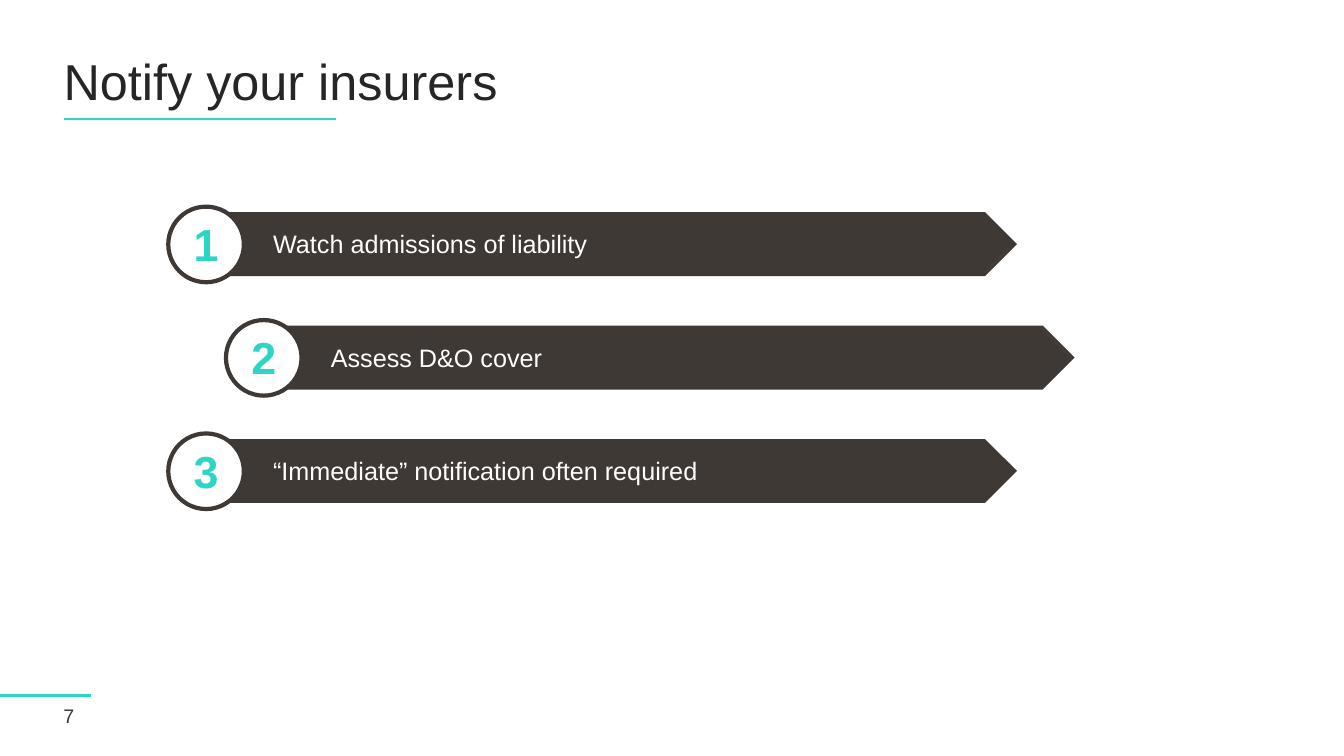
"""Build the slide on notifying insurers: three numbered arrow bars."""
from dataclasses import dataclass

from lxml import etree
from pptx import Presentation
from pptx import util as u
from pptx.dml.color import RGBColor
from pptx.enum import shapes, text
from pptx.oxml.ns import qn

TEAL = RGBColor(0x2C, 0xD5, 0xC4)
BROWN = RGBColor(0x3E, 0x39, 0x35)
BLACK = RGBColor(0x26, 0x26, 0x26)
WHITE = RGBColor(0xFF, 0xFF, 0xFF)
FONT = "Arial"

STEP_LEFT, STEP_TOP = 120.2, 147.6
STEP_PITCH, STEP_INDENT = 81, 41.2
CIRCLE = 54
NUMBER_BOX = 46


@dataclass(frozen=True)
class Step:
    number: int
    label: str
    indented: bool = False


STEPS = (
    Step(1, "Watch admissions of liability"),
    Step(2, "Assess D&O cover", indented=True),
    Step(3, "“Immediate” notification often required"),
)


def write(shape, content: str, size: float, color: RGBColor,
          align=text.PP_ALIGN.LEFT, bold: bool = False) -> None:
    frame = shape.text_frame
    frame.text = content
    frame.word_wrap = True
    frame.auto_size = text.MSO_AUTO_SIZE.NONE
    frame.vertical_anchor = text.MSO_ANCHOR.MIDDLE
    paragraph = frame.paragraphs[0]
    paragraph.alignment = align
    font = paragraph.runs[0].font
    font.name, font.size, font.bold = FONT, u.Pt(size), bold
    font.color.rgb = color


def add_label(parent, left: float, top: float, width: float, height: float,
              content: str, size: float, color: RGBColor, **style) -> None:
    box = parent.add_textbox(u.Pt(left), u.Pt(top), u.Pt(width), u.Pt(height))
    write(box, content, size, color, **style)


def add_preset(parent, kind, left: float, top: float, width: float,
               height: float, fill: RGBColor):
    shape = parent.add_shape(kind, u.Pt(left), u.Pt(top), u.Pt(width), u.Pt(height))
    shape.shadow.inherit = False
    shape.fill.solid()
    shape.fill.fore_color.rgb = fill
    shape.line.fill.background()
    return shape


def add_rule(slide, left: float, right: float, top: float) -> None:
    rule = slide.shapes.add_connector(
        shapes.MSO_CONNECTOR.STRAIGHT, u.Pt(left), u.Pt(top), u.Pt(right), u.Pt(top))
    rule.line.color.rgb = TEAL
    rule.line.width = u.Pt(1.5)
    etree.SubElement(rule._element.spPr, qn("a:effectLst"))


def add_step(slide, step: Step, index: int) -> None:
    left = STEP_LEFT + STEP_INDENT * step.indented
    top = STEP_TOP + STEP_PITCH * index
    group = slide.shapes.add_group_shape().shapes
    add_preset(group, shapes.MSO_SHAPE.PENTAGON, left + 26.6, top + 4, 579.6, 45.6, BROWN)
    add_label(group, left + 67.8, top + 12, 500, 29, step.label, 18, WHITE)
    circle = add_preset(group, shapes.MSO_SHAPE.OVAL, left, top, CIRCLE, CIRCLE, WHITE)
    circle.line.color.rgb = BROWN
    circle.line.width = u.Pt(3)
    inset = (CIRCLE - NUMBER_BOX) / 2
    add_label(group, left + inset, top + inset - 0.6, NUMBER_BOX, NUMBER_BOX,
              str(step.number), 32, TEAL, align=text.PP_ALIGN.CENTER, bold=True)


def add_title(slide, content: str) -> None:
    title = slide.shapes.title
    title.left, title.top = u.Pt(38.2), u.Pt(28.8)
    title.width, title.height = u.Pt(881.3), u.Pt(63.4)
    write(title, content, 36, BLACK)
    title.text_frame.paragraphs[0].line_spacing = 0.9


def main() -> None:
    presentation = Presentation()
    presentation.slide_width, presentation.slide_height = u.Pt(960), u.Pt(540)
    slide = presentation.slides.add_slide(presentation.slide_layouts[5])
    add_rule(slide, 46, 240, 85)
    add_rule(slide, 0, 65, 496.8)
    add_title(slide, "Notify your insurers")
    add_label(slide.shapes, 38.2, 502.6, 41, 17.3, "7", 14, BROWN)
    for index, step in enumerate(STEPS):
        add_step(slide, step, index)
    presentation.save("out.pptx")


if __name__ == "__main__":
    main()
